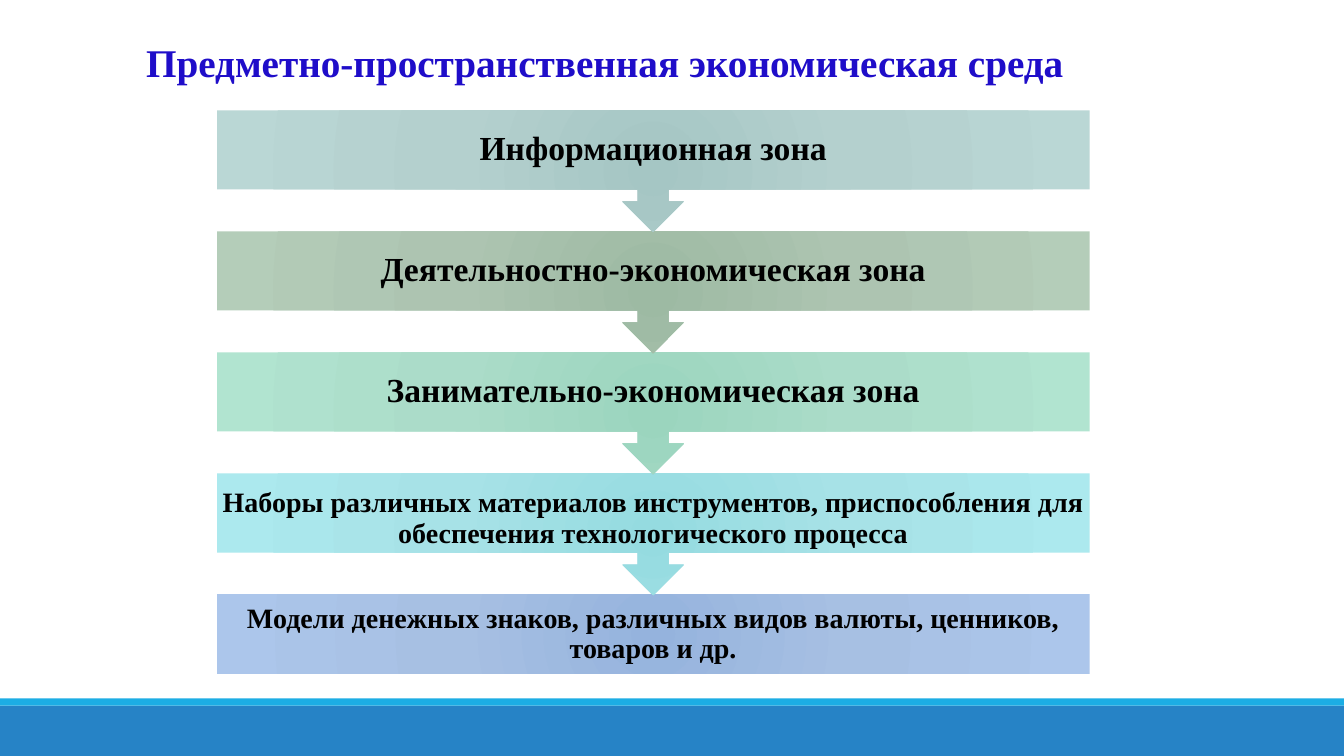
"""Slide showing the zones of an economic learning environment as a chain of callouts."""
from dataclasses import dataclass

from pptx import Presentation
from pptx import util as u
from pptx.dml.color import RGBColor
from pptx.enum import shapes, text
from pptx.oxml import parse_xml
from pptx.oxml.ns import nsdecls, qn

COLOURS = {
    "title": "1F0DC9",
    "zone text": "000000",
    "footer": "2683C6",
    "footer edge": "1CADE4",
}
GRADIENTS = {
    "grey teal": ("A5C6C4", "B4D0CE", "BAD7D5"),
    "sage": ("9DBAA3", "ADC4B1", "B4CDB9"),
    "mint": ("9BD5BE", "ABDCC9", "B1E4D0"),
    "aqua": ("95DBE0", "A7E2E7", "ACE9EE"),
    "blue": ("95B3DD", "A7C0E3", "ACC6EB"),
}
FONT = "Times New Roman"
SLIDE_WIDTH, SLIDE_HEIGHT = 33.87, 19.05
ZONE_LEFT, ZONE_TOP, ZONE_WIDTH = 5.46, 2.78, 22.0
ZONE_PITCH, BAR_HEIGHT, CALLOUT_HEIGHT = 3.05, 2.0, 3.07


@dataclass(frozen=True)
class Zone:
    """One step of the chain; insets are in centimetres."""
    caption: str
    gradient: str
    size: int = 24
    side_inset: float = 0.48
    top_inset: float = 0.48
    bottom_inset: float = 0.48


@dataclass(frozen=True)
class Band:
    """A full-width stripe at the foot of the slide."""
    top: float
    height: float
    colour: str


ZONES = (
    Zone("Информационная зона", "grey teal"),
    Zone("Деятельностно-экономическая зона", "sage"),
    Zone("Занимательно-экономическая зона", "mint"),
    Zone("Наборы различных материалов инструментов, приспособления для "
         "обеспечения технологического процесса", "aqua", 20, 0.1, 0.4, 0.1),
    Zone("Модели денежных знаков, различных видов валюты, ценников, "
         "товаров и др.", "blue", 20, 0.4, 0.4, 0.4),
)
BANDS = (
    Band(17.78, 1.27, "footer"),
    Band(17.6, 0.18, "footer edge"),
)


def format_paragraph(paragraph, size: int, colour: str, alignment) -> None:
    """Apply the bold serif style of the slide."""
    paragraph.alignment = alignment
    paragraph.line_spacing = 0.9
    font = paragraph.font
    font.name, font.size, font.bold = FONT, u.Pt(size), True
    font.color.rgb = RGBColor.from_string(COLOURS[colour])


def fill_radially(shape, gradient: str) -> None:
    """Give the shape a circular three-stop gradient."""
    stops = "".join(
        f'<a:gs pos="{position}"><a:srgbClr val="{colour}"/></a:gs>'
        for position, colour in zip((0, 45000, 100000), GRADIENTS[gradient]))
    shape.fill.background()
    properties = shape._element.spPr
    properties.replace(properties.find(qn("a:noFill")), parse_xml(
        f'<a:gradFill {nsdecls("a")} rotWithShape="1"><a:gsLst>{stops}</a:gsLst>'
        '<a:path path="circle"><a:fillToRect l="100000" t="100000" '
        'r="100000" b="100000"/></a:path></a:gradFill>'))


def draw_band(slide, band: Band) -> None:
    """Draw a plain stripe across the slide."""
    stripe = slide.shapes.add_shape(
        shapes.MSO_SHAPE.RECTANGLE, 0, u.Cm(band.top), u.Cm(SLIDE_WIDTH), u.Cm(band.height))
    stripe.shadow.inherit = False
    stripe.fill.solid()
    stripe.fill.fore_color.rgb = RGBColor.from_string(COLOURS[band.colour])
    stripe.line.fill.background()


def draw_zone(slide, index: int, zone: Zone) -> None:
    """Draw a zone bar, with an arrow to the next one unless it is the last."""
    is_last = index == len(ZONES) - 1
    outline = shapes.MSO_SHAPE.RECTANGLE if is_last else shapes.MSO_SHAPE.DOWN_ARROW_CALLOUT
    bar = slide.shapes.add_shape(
        outline, u.Cm(ZONE_LEFT), u.Cm(ZONE_TOP + index * ZONE_PITCH),
        u.Cm(ZONE_WIDTH), u.Cm(BAR_HEIGHT if is_last else CALLOUT_HEIGHT))
    bar.shadow.inherit = False
    bar.line.fill.background()
    fill_radially(bar, zone.gradient)
    frame = bar.text_frame
    frame.word_wrap = True
    frame.vertical_anchor = text.MSO_ANCHOR.MIDDLE
    frame.margin_left = frame.margin_right = u.Cm(zone.side_inset)
    frame.margin_top, frame.margin_bottom = u.Cm(zone.top_inset), u.Cm(zone.bottom_inset)
    frame.text = zone.caption
    format_paragraph(frame.paragraphs[0], zone.size, "zone text", text.PP_ALIGN.CENTER)


def write_heading(slide) -> None:
    """Fill and place the title placeholder."""
    heading = slide.shapes.title
    heading.left, heading.top = u.Cm(3.43), u.Cm(0.91)
    heading.width, heading.height = u.Cm(26.37), u.Cm(1.45)
    frame = heading.text_frame
    frame.text = "Предметно-пространственная экономическая среда"
    frame.word_wrap = True
    frame.auto_size = text.MSO_AUTO_SIZE.NONE
    frame.vertical_anchor = text.MSO_ANCHOR.MIDDLE
    format_paragraph(frame.paragraphs[0], 28, "title", text.PP_ALIGN.LEFT)


def main() -> None:
    """Build and save the slide."""
    deck = Presentation()
    deck.slide_width, deck.slide_height = u.Cm(SLIDE_WIDTH), u.Cm(SLIDE_HEIGHT)
    slide = deck.slides.add_slide(deck.slide_layouts.get_by_name("Title Only"))
    for band in BANDS:
        draw_band(slide, band)
    write_heading(slide)
    for index, zone in reversed(list(enumerate(ZONES))):
        draw_zone(slide, index, zone)
    deck.save("out.pptx")


if __name__ == "__main__":
    main()
